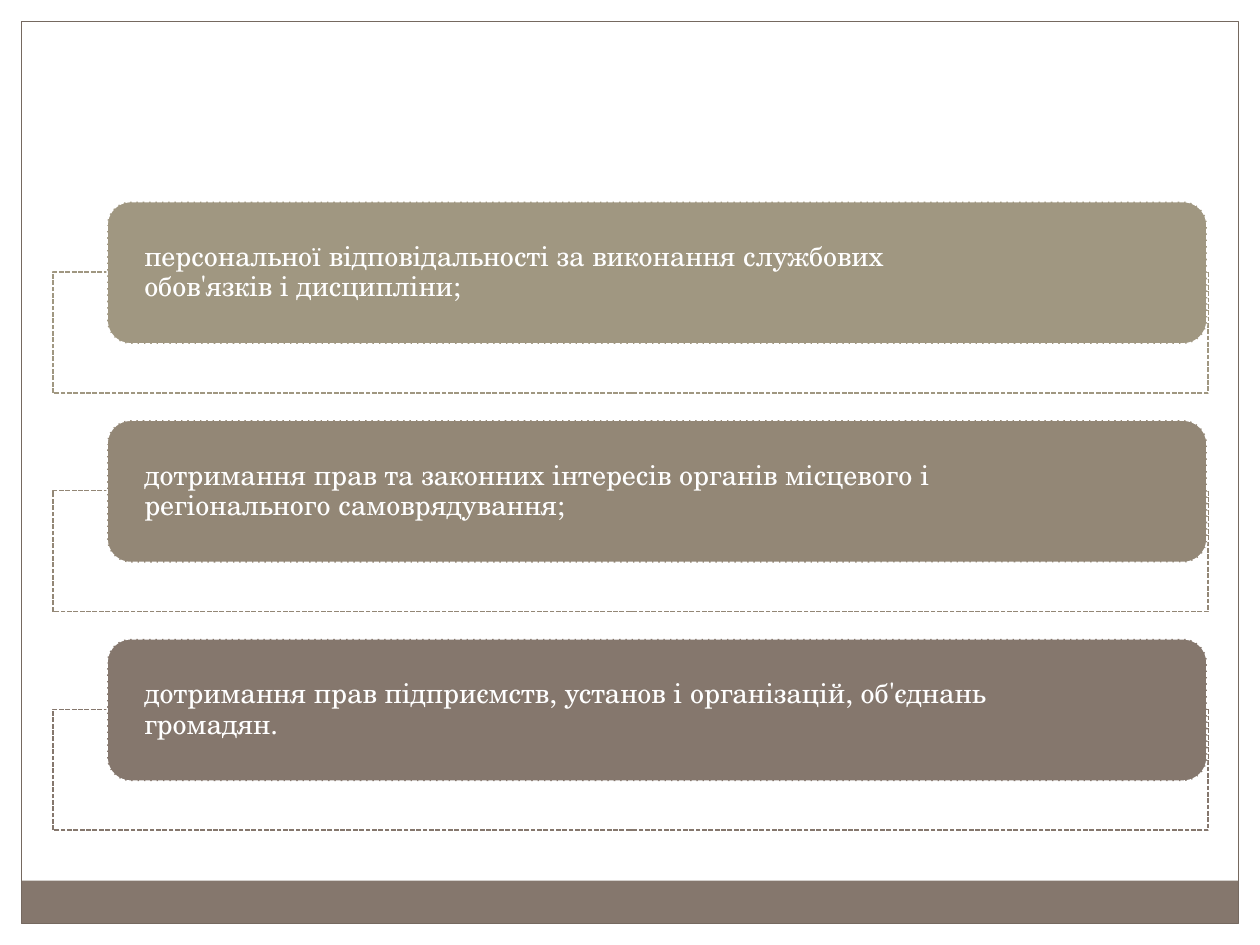
from pptx import Presentation
from pptx.dml.color import RGBColor
from pptx.enum.dml import MSO_LINE
from pptx.enum.shapes import MSO_SHAPE
from pptx.enum.text import MSO_ANCHOR, PP_ALIGN
from pptx.util import Inches, Pt

RECT = MSO_SHAPE.RECTANGLE
ROUNDED = MSO_SHAPE.ROUNDED_RECTANGLE
DASH = MSO_LINE.SQUARE_DOT
MIDDLE = MSO_ANCHOR.MIDDLE
LEFT = PP_ALIGN.LEFT

WIDTH, HEIGHT = 10, 7.5
MARGIN = 0.17
FIRST_ROW, ROW_STEP = 1.6, 1.735
WHITE, TAUPE = "FFFFFF", "85776D"


def color(value):
    return RGBColor.from_string(value)


def block(kind, left, top, width, height, fill=None, line=None, weight=0.9, dash=None):
    shape = slide.shapes.add_shape(kind, Inches(left), Inches(top), Inches(width), Inches(height))
    shape.shadow.inherit = False
    if fill:
        shape.fill.solid()
        shape.fill.fore_color.rgb = color(fill)
    else:
        shape.fill.background()
    if line:
        shape.line.color.rgb = color(line)
        shape.line.width = Pt(weight)
        shape.line.dash_style = dash
    else:
        shape.line.fill.background()
    return shape


prs = Presentation()
prs.slide_width, prs.slide_height = Inches(WIDTH), Inches(HEIGHT)
slide = prs.slides.add_slide(prs.slide_layouts[6])

block(RECT, 0, 0, WIDTH, MARGIN, WHITE)
for edge in (WIDTH - MARGIN, 0):
    block(RECT, edge, 0, MARGIN, HEIGHT, WHITE)
block(RECT, MARGIN, 6.99, WIDTH - 2 * MARGIN, 0.34, TAUPE)
block(RECT, MARGIN, MARGIN, WIDTH - 2 * MARGIN, HEIGHT - 2 * MARGIN, line="756960", weight=0.75)

principles = [
    ("A09781", "персональної відповідальності за виконання службових ", "обов'язків і дисципліни;"),
    ("938776", "дотримання прав та законних інтересів органів місцевого і ", "регіонального самоврядування;"),
    (TAUPE, "дотримання прав підприємств, установ і організацій, об'єднань ", "громадян."),
]

for row, (tone, opening, ending) in enumerate(principles):
    top = FIRST_ROW + row * ROW_STEP
    block(RECT, 0.42, top + 0.56, 9.17, 0.96, WHITE, tone, dash=DASH)
    principle = block(ROUNDED, 0.85, top, 8.73, 1.13, tone, WHITE, dash=DASH)
    frame = principle.text_frame
    frame.word_wrap = True
    frame.vertical_anchor = MIDDLE
    frame.margin_left = frame.margin_right = Inches(0.24)
    frame.margin_top = frame.margin_bottom = 0
    paragraph = frame.paragraphs[0]
    paragraph.alignment = LEFT
    paragraph.line_spacing = 0.9
    paragraph.text = opening
    paragraph.add_line_break()
    paragraph.add_run().text = ending
    for run in paragraph.runs:
        run.font.name = "TeX Gyre Schola"
        run.font.size = Pt(16)
        run.font.color.rgb = color(WHITE)

prs.save("out.pptx")
